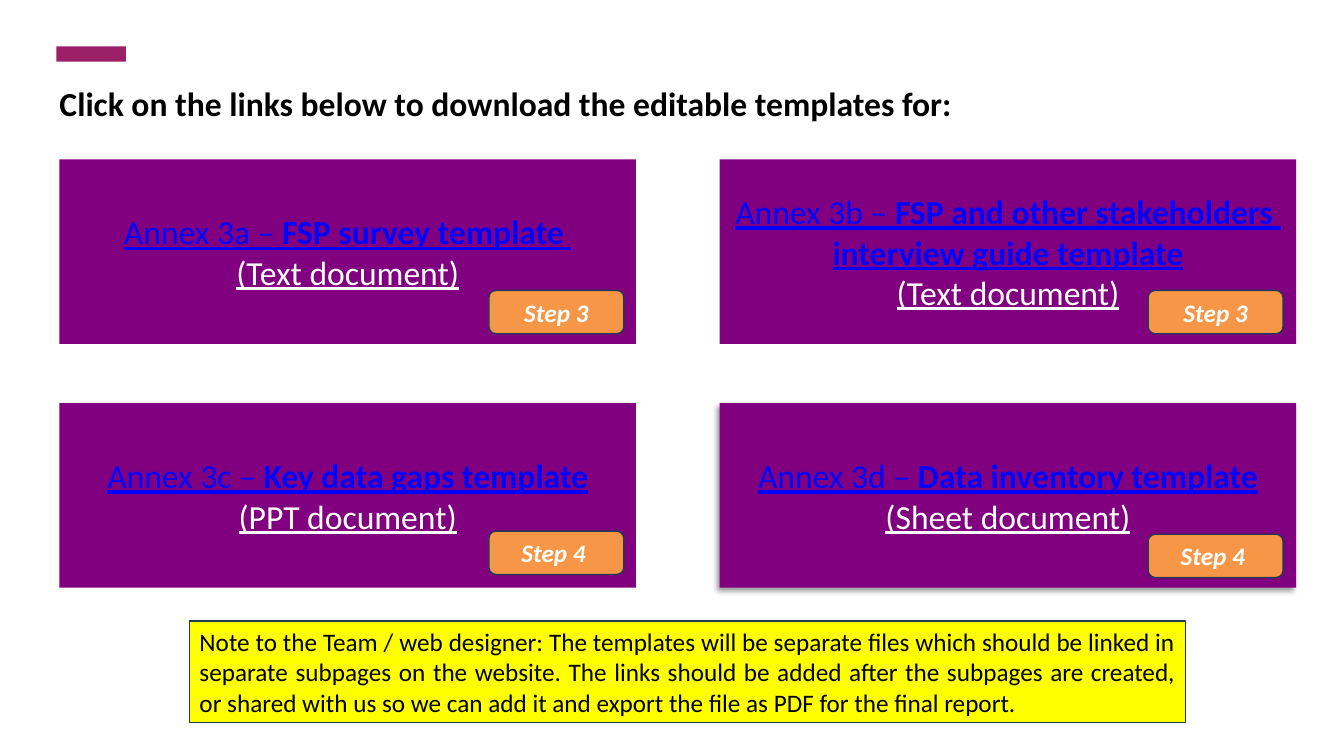
from lxml.etree import SubElement
from pptx import Presentation
from pptx.dml.color import RGBColor
from pptx.enum.shapes import MSO_SHAPE as Shape
from pptx.enum.text import MSO_ANCHOR as Anchor, PP_ALIGN as Align
from pptx.oxml.ns import qn
from pptx.util import Pt

COLORS = {
    "accent": "9B2068", "card": "800080", "link": "0000FF", "white": "FFFFFF",
    "black": "000000", "note": "FFFF00", "badge": "F79646", "border": "233953",
}
LINK = {"size": Pt(24), "underline": True}
STEP = {"size": Pt(18), "bold": True, "italic": True}

# Card grid
LEFT, TOP = 42.5, 113.8
COLUMN_STEP, ROW_STEP = 471.6, 174.2
CARD_SIZE = (411.8, 131.8)
BADGE_SIZE = (96.5, 31)

# Annex label, template name lines, document type, whether the type is its own paragraph
CARDS = [
    ("Annex 3a – ", ["FSP survey template "], "(Text document)", False),
    ("Annex 3b – ", ["FSP and other stakeholders ", "interview guide template"],
     "(Text document)", True),
    ("Annex 3c – ", ["Key data gaps template"], "(PPT document)", False),
    ("Annex 3d – ", ["Data inventory template"], "(Sheet document)", False),
]
BADGES = [
    ("Step 3", 349.2, 207.4), ("Step 3", 820.1, 207.4),
    ("Step 4 ", 349.2, 379.4), ("Step 4 ", 820.1, 381.6),
]
TITLE = "Click on the links below to download the editable templates for:"
NOTE = (
    "Note to the Team / web designer: The templates will be separate files which "
    "should be linked in separate subpages on the website. The links should be added "
    "after the subpages are created, or shared with us so we can add it and export "
    "the file as PDF for the final report."
)


def rgb(name):
    return RGBColor.from_string(COLORS[name])


def add_run(paragraph, text, color, formats):
    run = paragraph.add_run()
    run.text = text
    run.font.name = "Calibri"
    run.font.color.rgb = rgb(color)
    for attribute, value in formats.items():
        setattr(run.font, attribute, value)


def add_box(slide, kind, left, top, size, fill, border=None):
    shape = slide.shapes.add_shape(kind, Pt(left), Pt(top), *map(Pt, size))
    shape.shadow.inherit = False
    shape.fill.solid()
    shape.fill.fore_color.rgb = rgb(fill)
    if border:
        shape.line.color.rgb = rgb(border)
        shape.line.width = Pt(1)
    else:
        shape.line.fill.background()
    shape.text_frame.word_wrap = True
    shape.text_frame.vertical_anchor = Anchor.MIDDLE
    return shape


def add_title(slide):
    title = slide.shapes.title
    place = {"left": 35.3, "top": 56.9, "width": 791.3, "height": 36.7}
    for attribute, value in place.items():
        setattr(title, attribute, Pt(value))
    title.text_frame.word_wrap = True
    title.text_frame.vertical_anchor = Anchor.MIDDLE
    paragraph = title.text_frame.paragraphs[0]
    paragraph.alignment = Align.LEFT
    paragraph.line_spacing = 0.9
    add_run(paragraph, TITLE, "black", {"size": Pt(24), "bold": True})


def add_card(slide, left, top, label, name_lines, document, own_paragraph):
    card = add_box(slide, Shape.RECTANGLE, left, top, CARD_SIZE, "card")
    paragraph = card.text_frame.paragraphs[0]
    paragraph.alignment = Align.CENTER
    add_run(paragraph, label, "link", LINK)
    for index, line in enumerate(name_lines):
        if index:
            paragraph.add_line_break()
        add_run(paragraph, line, "link", LINK | {"bold": True})
    if own_paragraph:
        paragraph = card.text_frame.add_paragraph()
        paragraph.alignment = Align.CENTER
    else:
        paragraph.add_line_break()
    add_run(paragraph, document, "white", LINK)
    return card


def add_shadow(shape):
    effects = shape._element.spPr.find(qn("a:effectLst"))
    shadow = SubElement(effects, qn("a:outerShdw"), blurRad=str(Pt(4)),
                        dist=str(Pt(3)), dir=str(135 * 60000), rotWithShape="0")
    color = SubElement(shadow, qn("a:srgbClr"), val=COLORS["black"])
    SubElement(color, qn("a:alpha"), val="40000")


def add_label(slide, kind, left, top, size, fill, text, color, formats, align):
    box = add_box(slide, kind, left, top, size, fill, "border")
    paragraph = box.text_frame.paragraphs[0]
    paragraph.alignment = align
    add_run(paragraph, text, color, formats)


def main():
    presentation = Presentation()
    presentation.slide_width, presentation.slide_height = Pt(960), Pt(540)
    slide = presentation.slides.add_slide(presentation.slide_layouts[5])

    # Heading
    add_box(slide, Shape.RECTANGLE, 40.3, 33.1, (49.7, 11), "accent")
    add_title(slide)

    # Template cards, the last one raised
    for index, content in enumerate(CARDS):
        row, column = divmod(index, 2)
        card = add_card(slide, LEFT + column * COLUMN_STEP, TOP + row * ROW_STEP, *content)
    add_shadow(card)

    # Step badges
    for text, left, top in BADGES:
        add_label(slide, Shape.ROUNDED_RECTANGLE, left, top, BADGE_SIZE, "badge",
                  text, "white", STEP, Align.CENTER)

    # Note
    add_label(slide, Shape.RECTANGLE, 135.4, 443.5, (711.4, 72.7), "note",
              NOTE, "black", {"size": Pt(18)}, Align.JUSTIFY)

    presentation.save("out.pptx")


if __name__ == "__main__":
    main()
